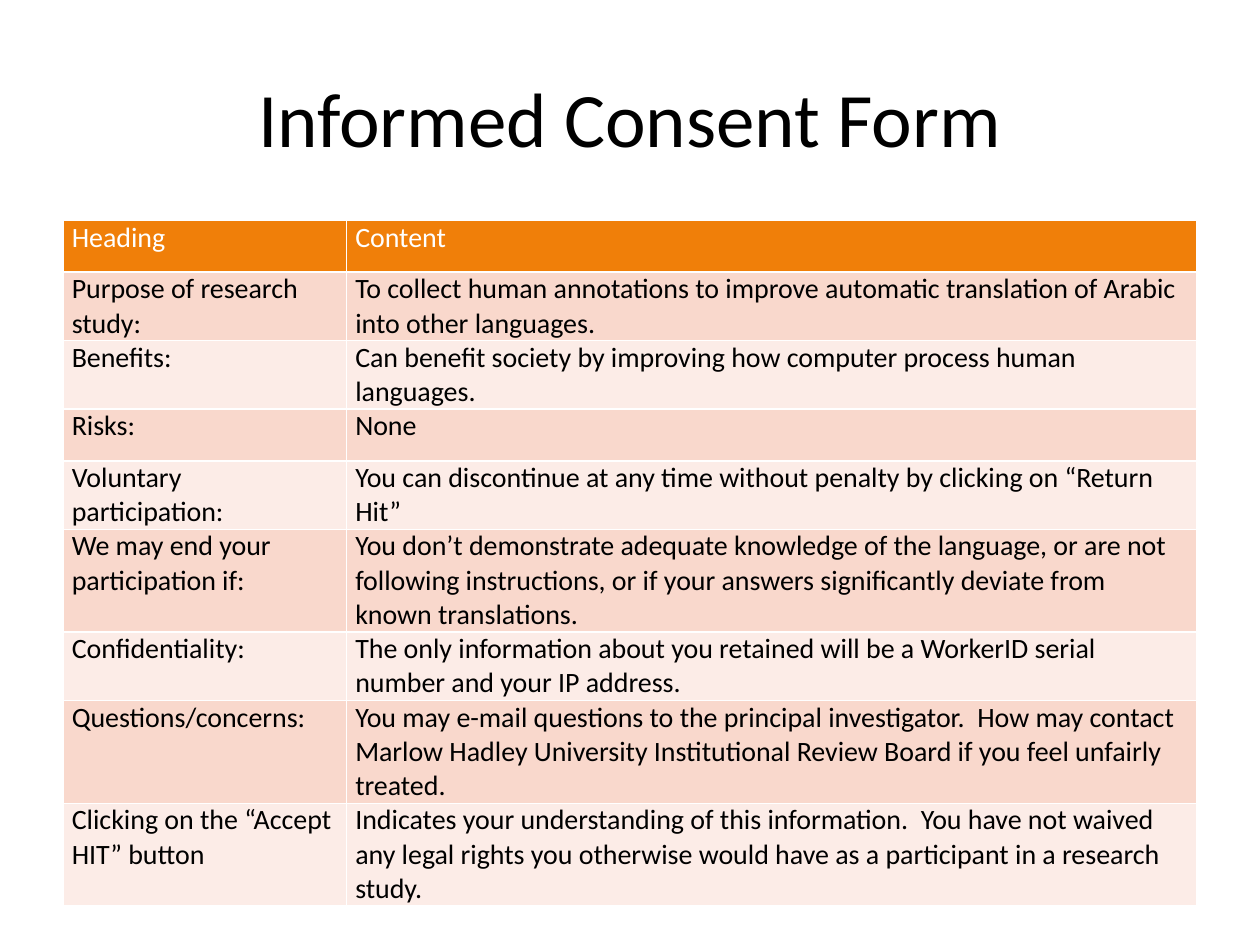
from typing import NamedTuple

from lxml import etree
from pptx import Presentation
from pptx.dml.color import RGBColor
from pptx.enum.text import MSO_ANCHOR, PP_ALIGN
from pptx.oxml.ns import qn
from pptx.util import Inches, Pt

MIDDLE = MSO_ANCHOR.MIDDLE
CENTER = PP_ALIGN.CENTER

BLACK = RGBColor(0x00, 0x00, 0x00)
WHITE = RGBColor(0xFF, 0xFF, 0xFF)
ORANGE = RGBColor(0xF0, 0x7F, 0x09)
ROSE = RGBColor(0xF9, 0xD8, 0xCC)
PALE = RGBColor(0xFC, 0xEC, 0xE7)

FONT = "Calibri"
WIDE, HIGH = Inches(10), Inches(7.5)
EDGE = int(WIDE * 0.05)
SPAN = WIDE - 2 * EDGE
SHARES = (0.25, 0.75)
ROW_HIGH = Inches(0.41)


class Row(NamedTuple):
    heading: str
    content: str


ROWS = [
    Row("Heading", "Content"),
    Row("Purpose of research study:",
        "To collect human annotations to improve automatic translation of "
        "Arabic into other languages."),
    Row("Benefits:",
        "Can benefit society by improving how computer process human "
        "languages."),
    Row("Risks:", "None"),
    Row("Voluntary participation:",
        "You can discontinue at any time without penalty by clicking on "
        "“Return Hit”"),
    Row("We may end your participation if:",
        "You don’t demonstrate adequate knowledge of the language, or are "
        "not following instructions, or if your answers significantly "
        "deviate from known translations."),
    Row("Confidentiality:",
        "The only information about you retained will be a WorkerID serial "
        "number and your IP address."),
    Row("Questions/concerns:",
        "You may e-mail questions to the principal investigator.  How may "
        "contact Marlow Hadley University Institutional Review Board if you "
        "feel unfairly treated."),
    Row("Clicking on the “Accept HIT” button",
        "Indicates your understanding of this information.  You have not "
        "waived any legal rights you otherwise would have as a participant "
        "in a research study."),
]


def write(frame, text: str, size: float, color: RGBColor) -> None:
    frame.text = text
    font = frame.paragraphs[0].runs[0].font
    font.name, font.size, font.bold = FONT, Pt(size), False
    font.color.rgb = color


def add_edges(cell, color: RGBColor, width: float) -> None:
    """Draw a line on all four sides; call before the cell is filled."""
    props = cell._tc.get_or_add_tcPr()
    for side in ("a:lnL", "a:lnR", "a:lnT", "a:lnB"):
        line = etree.SubElement(props, qn(side), w=str(Pt(width)))
        fill = etree.SubElement(line, qn("a:solidFill"))
        etree.SubElement(fill, qn("a:srgbClr"), val=str(color))


def draw_cell(cell, text: str, fill: RGBColor, ink: RGBColor) -> None:
    cell.margin_left = cell.margin_right = Inches(0.07)
    cell.margin_top = cell.margin_bottom = 0
    write(cell.text_frame, text, 16, ink)
    add_edges(cell, WHITE, 1)
    cell.fill.solid()
    cell.fill.fore_color.rgb = fill


def draw_title(slide, text: str) -> None:
    title = slide.shapes.title
    title.left, title.top = EDGE, Inches(0.3)
    title.width, title.height = SPAN, Inches(1.25)
    write(title.text_frame, text, 44, BLACK)
    title.text_frame.vertical_anchor = MIDDLE
    title.text_frame.paragraphs[0].alignment = CENTER


def draw_table(slide, rows: list[Row]) -> None:
    table = slide.shapes.add_table(
        len(rows), len(SHARES), EDGE, Inches(1.75), SPAN,
        ROW_HIGH * len(rows)).table
    for column, share in zip(table.columns, SHARES):
        column.width = int(SPAN * share)
    for r, row in enumerate(rows):
        table.rows[r].height = ROW_HIGH
        if r == 0:
            fill, ink = ORANGE, WHITE
        else:
            fill, ink = (ROSE if r % 2 else PALE), BLACK
        for c, text in enumerate(row):
            draw_cell(table.cell(r, c), text, fill, ink)


def main() -> None:
    deck = Presentation()
    deck.slide_width, deck.slide_height = WIDE, HIGH
    slide = deck.slides.add_slide(deck.slide_layouts.get_by_name("Title Only"))
    draw_title(slide, "Informed Consent Form")
    draw_table(slide, ROWS)
    deck.save("out.pptx")


if __name__ == "__main__":
    main()
